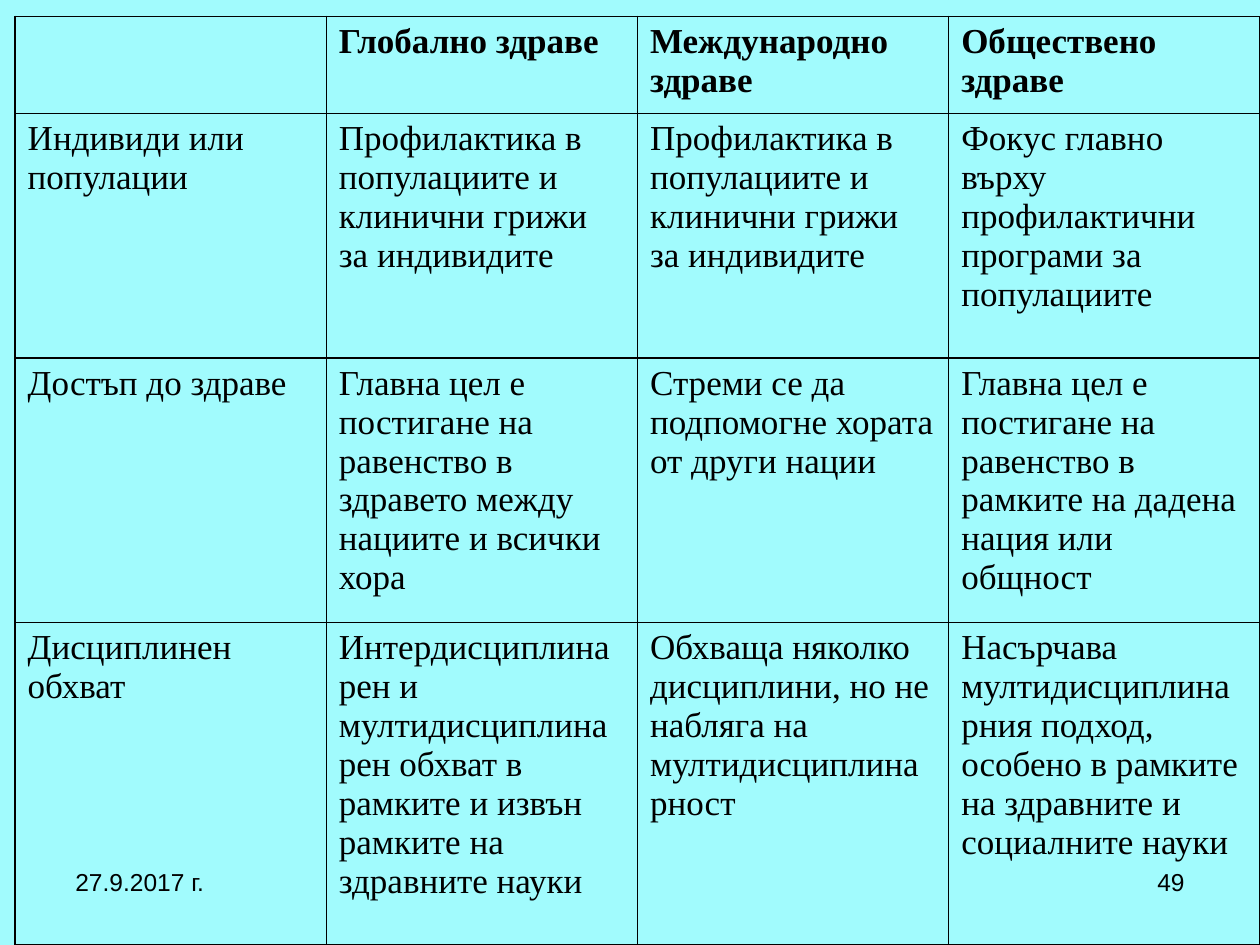
from pptx import Presentation, util as u
from pptx.dml.color import RGBColor
from pptx.enum import text
from pptx.oxml import parse_xml
from pptx.oxml.ns import nsdecls

WIDTH, HEIGHT = 10, 7.5
BACKGROUND, INK = "A1FBFD", "000000"

ROWS = [
    ["", "Глобално здраве", "Международно здраве", "Обществено здраве"],
    ["Индивиди или популации",
     "Профилактика в популациите и клинични грижи за индивидите",
     "Профилактика в популациите и клинични грижи за индивидите",
     "Фокус главно върху профилактични програми за популациите"],
    ["Достъп до здраве",
     "Главна цел е постигане на равенство в здравето между нациите и всички хора",
     "Стреми се да подпомогне хората от други нации",
     "Главна цел е постигане на равенство в рамките на дадена нация или общност"],
    ["Дисциплинен обхват",
     "Интердисциплинарен и мултидисциплинарен обхват в рамките и извън рамките на здравните науки",
     "Обхваща няколко дисциплини, но не набляга на мултидисциплинарност",
     "Насърчава мултидисциплинарния подход, особено в рамките на здравните и социалните науки"],
]
ROW_HEIGHTS = [0.77, 1.94, 2.1, 2.56]
TABLE_LEFT, TABLE_TOP = 0.12, 0.13

MARGIN, FOOTER_TOP, FOOTER_W, FOOTER_H = 0.5, 6.83, 2.33, 0.52
FOOTERS = [
    ("27.9.2017 г.", MARGIN, text.PP_ALIGN.LEFT),
    ("49", WIDTH - MARGIN - FOOTER_W, text.PP_ALIGN.RIGHT),
]


def color(value):
    return RGBColor.from_string(value)


def style(p, name, size, bold=False):
    for r in p.runs:
        r.font.name, r.font.size, r.font.bold = name, u.Pt(size), bold
        r.font.color.rgb = color(INK)


def add_borders(cell, width=1):
    tc_pr = cell._tc.get_or_add_tcPr()
    for side in "LRTB":
        tc_pr.append(parse_xml(
            f'<a:ln{side} {nsdecls("a")} w="{u.Pt(width)}"><a:solidFill>'
            f'<a:srgbClr val="{INK}"/></a:solidFill></a:ln{side}>'))


def add_comparison(slide):
    frame = slide.shapes.add_table(
        len(ROWS), len(ROWS[0]), u.Inches(TABLE_LEFT), u.Inches(TABLE_TOP),
        u.Inches(WIDTH - TABLE_LEFT), u.Inches(sum(ROW_HEIGHTS)))
    table = frame.table
    table.horz_banding = False
    for i, (values, height) in enumerate(zip(ROWS, ROW_HEIGHTS)):
        table.rows[i].height = u.Inches(height)
        for j, value in enumerate(values):
            cell = table.cell(i, j)
            cell.text_frame.text = value
            style(cell.text_frame.paragraphs[0], "Times New Roman", 20, bold=i == 0)
            add_borders(cell)
            cell.fill.background()


def add_footer(slide, value, left, align):
    box = slide.shapes.add_textbox(*map(u.Inches, (left, FOOTER_TOP, FOOTER_W, FOOTER_H)))
    tf = box.text_frame
    tf.word_wrap = True
    tf.text = value
    p = tf.paragraphs[0]
    p.alignment = align
    style(p, "Arial", 14)


def main():
    prs = Presentation()
    prs.slide_width, prs.slide_height = u.Inches(WIDTH), u.Inches(HEIGHT)
    slide = prs.slides.add_slide(prs.slide_layouts[6])
    fill = slide.background.fill
    fill.solid()
    fill.fore_color.rgb = color(BACKGROUND)
    add_comparison(slide)
    for footer in FOOTERS:
        add_footer(slide, *footer)
    prs.save("out.pptx")


if __name__ == "__main__":
    main()
